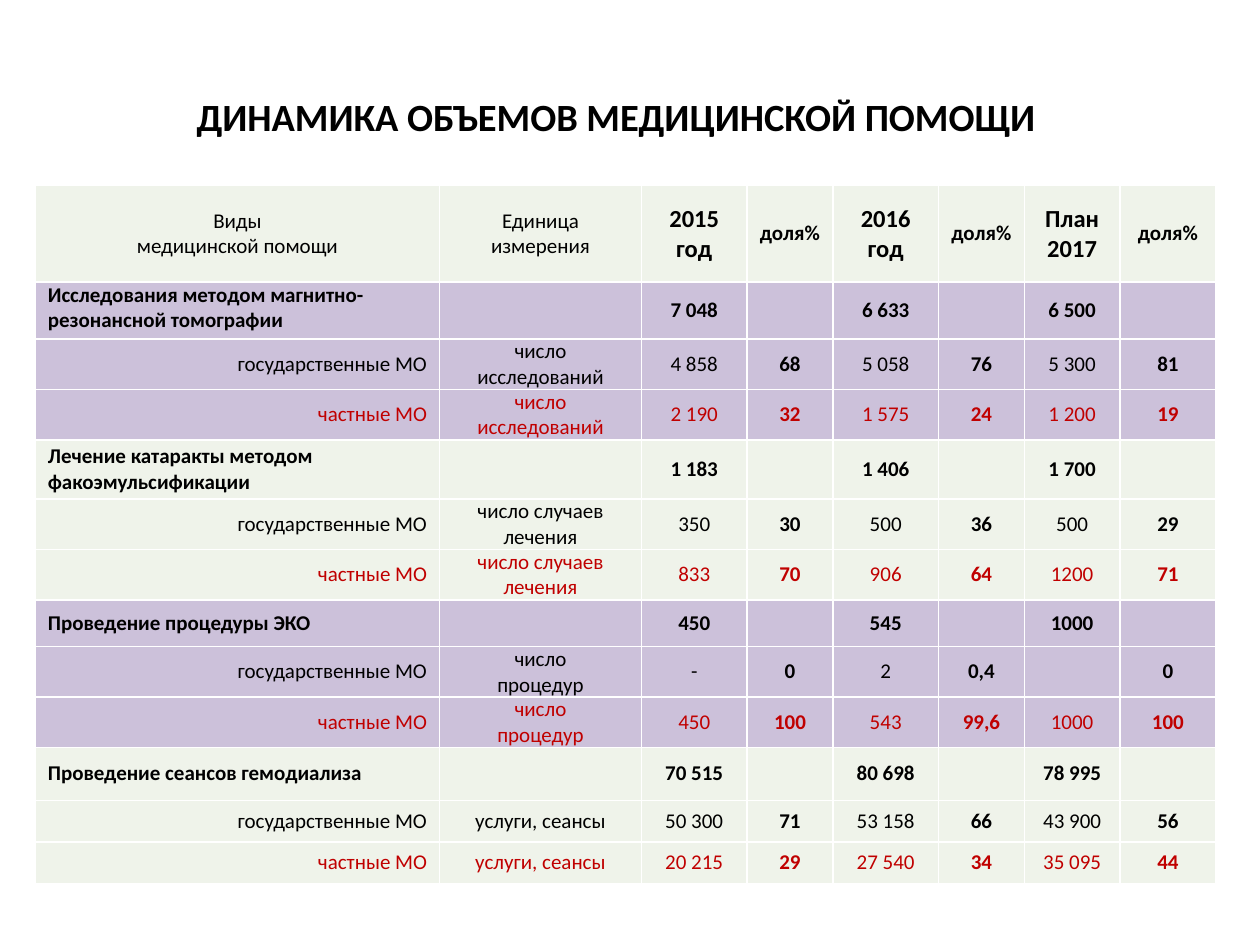
from lxml import etree
from pptx import Presentation
from pptx.dml.color import RGBColor
from pptx.enum.text import MSO_ANCHOR, PP_ALIGN
from pptx.oxml.ns import qn
from pptx.util import Inches, Pt

LEFT, MID, RIGHT = PP_ALIGN.LEFT, PP_ALIGN.CENTER, PP_ALIGN.RIGHT
TOP, CENTRE = MSO_ANCHOR.TOP, MSO_ANCHOR.MIDDLE

HUES = {"ink": "000000", "red": "C00000", "pale": "EFF3EA",
        "lilac": "CCC1DA", "line": "FFFFFF"}

COLS = [3.21, 1.6, 0.84, 0.68, 0.84, 0.68, 0.76, 0.76]
ROWS = [0.77, 0.45, 0.38, 0.38, 0.47, 0.38, 0.38,
        0.37, 0.38, 0.38, 0.42, 0.33, 0.33]
HEADS = ["Виды\nмедицинской помощи", "Единица измерения", "2015 год", "доля%",
         "2016 год", "доля%", "План\n2017", "доля%"]

# Care type, unit, yearly totals, then value and share per year
# for state and for private clinics
CARE = [
    ("Исследования методом магнитно-резонансной томографии",
     "число\nисследований", ["7 048", "6 633", "6 500"],
     ["4 858", "68", "5 058", "76", "5 300", "81"],
     ["2 190", "32", "1 575", "24", "1 200", "19"]),
    ("Лечение катаракты методом факоэмульсификации",
     "число случаев лечения", ["1 183", "1 406", "1 700"],
     ["350", "30", "500", "36", "500", "29"],
     ["833", "70", "906", "64", "1200", "71"]),
    ("Проведение процедуры ЭКО",
     "число\nпроцедур", ["450", "545", "1000"],
     ["-", "0", "2", "0,4", "", "0"],
     ["450", "100", "543", "99,6", "1000", "100"]),
    ("Проведение сеансов гемодиализа",
     "услуги, сеансы", ["70 515", "80 698", "78 995"],
     ["50 300", "71", "53 158", "66", "43 900", "56"],
     ["20 215", "29", "27 540", "34", "35 095", "44"]),
]


class Deck:
    """Style and current slide; boxes are in percent of the slide."""

    font = "Calibri"

    def __init__(self, wide, high):
        self.prs = Presentation()
        self.prs.slide_width, self.prs.slide_height = Inches(wide), Inches(high)
        self.slide = self.prs.slides.add_slide(self.prs.slide_layouts[6])

    def box(self, x, y, w, h):
        wide, high = self.prs.slide_width, self.prs.slide_height
        return [round(part * side / 100)
                for part, side in ((x, wide), (y, high), (w, wide), (h, high))]

    def label(self, frame, text, size=12, bold=False, hue="ink", align=MID):
        frame.text = text
        for par in frame.paragraphs:
            par.alignment = align
            for item in [par, *par.runs]:
                item.font.name, item.font.size = self.font, Pt(size)
                item.font.bold = bold
                item.font.color.rgb = RGBColor.from_string(HUES[hue])

    def title(self, text, place, inset):
        frame = self.slide.shapes.add_textbox(*self.box(*place)).text_frame
        frame.word_wrap = True
        frame.vertical_anchor = CENTRE
        frame.margin_right = Inches(inset)
        self.label(frame, text, 22, True)

    def table(self, place, cols, rows):
        """Add a plain table whose columns and rows are weights."""
        x, y, w, h = self.box(*place)
        grid = self.slide.shapes.add_table(len(rows), len(cols), x, y, w, h).table
        grid.first_row = grid.horz_banding = False
        for col, part in zip(grid.columns, cols):
            col.width = round(w * part / sum(cols))
        for row, part in zip(grid.rows, rows):
            row.height = round(h * part / sum(rows))
        return grid

    def cell(self, cell, text, fill, side=0.1, anchor=CENTRE, **look):
        cell.margin_top = cell.margin_bottom = 0
        cell.margin_left = cell.margin_right = Inches(side)
        cell.vertical_anchor = anchor
        self.edge(cell)
        cell.fill.solid()
        cell.fill.fore_color.rgb = RGBColor.from_string(HUES[fill])
        self.label(cell.text_frame, text, **look)

    def edge(self, cell):
        props = cell._tc.get_or_add_tcPr()
        for tag in ("a:lnL", "a:lnR", "a:lnT", "a:lnB"):
            line = etree.SubElement(props, qn(tag), w=str(Pt(1)))
            fill = etree.SubElement(line, qn("a:solidFill"))
            etree.SubElement(fill, qn("a:srgbClr"), val=HUES["line"])


def fill_head(deck, grid):
    for col, text in enumerate(HEADS):
        big = col in (2, 4, 6)
        deck.cell(grid.cell(0, col), text, "pale",
                  size=14 if big else 12, bold=col > 1)


def fill_care(deck, grid):
    for group, (name, unit, sums, state, private) in enumerate(CARE):
        fill = "pale" if group % 2 else "lilac"
        total = [name, ""] + [text for item in sums for text in (item, "")]
        lines = [(total, "ink"),
                 (["государственные МО", unit, *state], "ink"),
                 (["частные МО", unit, *private], "red")]
        for step, (texts, hue) in enumerate(lines):
            for col, text in enumerate(texts):
                side = 0 if col > 5 else 0.1
                share = col in (3, 5, 7)
                align = MID if col else RIGHT if step else LEFT
                anchor = TOP if group == step == col == 0 else CENTRE
                deck.cell(grid.cell(1 + 3 * group + step, col), text, fill,
                          side, anchor, bold=step == 0 or share,
                          hue=hue, align=align)


def main():
    deck = Deck(10, 7.5)
    deck.title("ДИНАМИКА ОБЪЕМОВ МЕДИЦИНСКОЙ ПОМОЩИ", (5, 4, 90, 16.67), 0.32)
    grid = deck.table((2.8, 19.6, 93.7, 72.27), COLS, ROWS)
    fill_head(deck, grid)
    fill_care(deck, grid)
    deck.prs.save("out.pptx")


if __name__ == "__main__":
    main()
